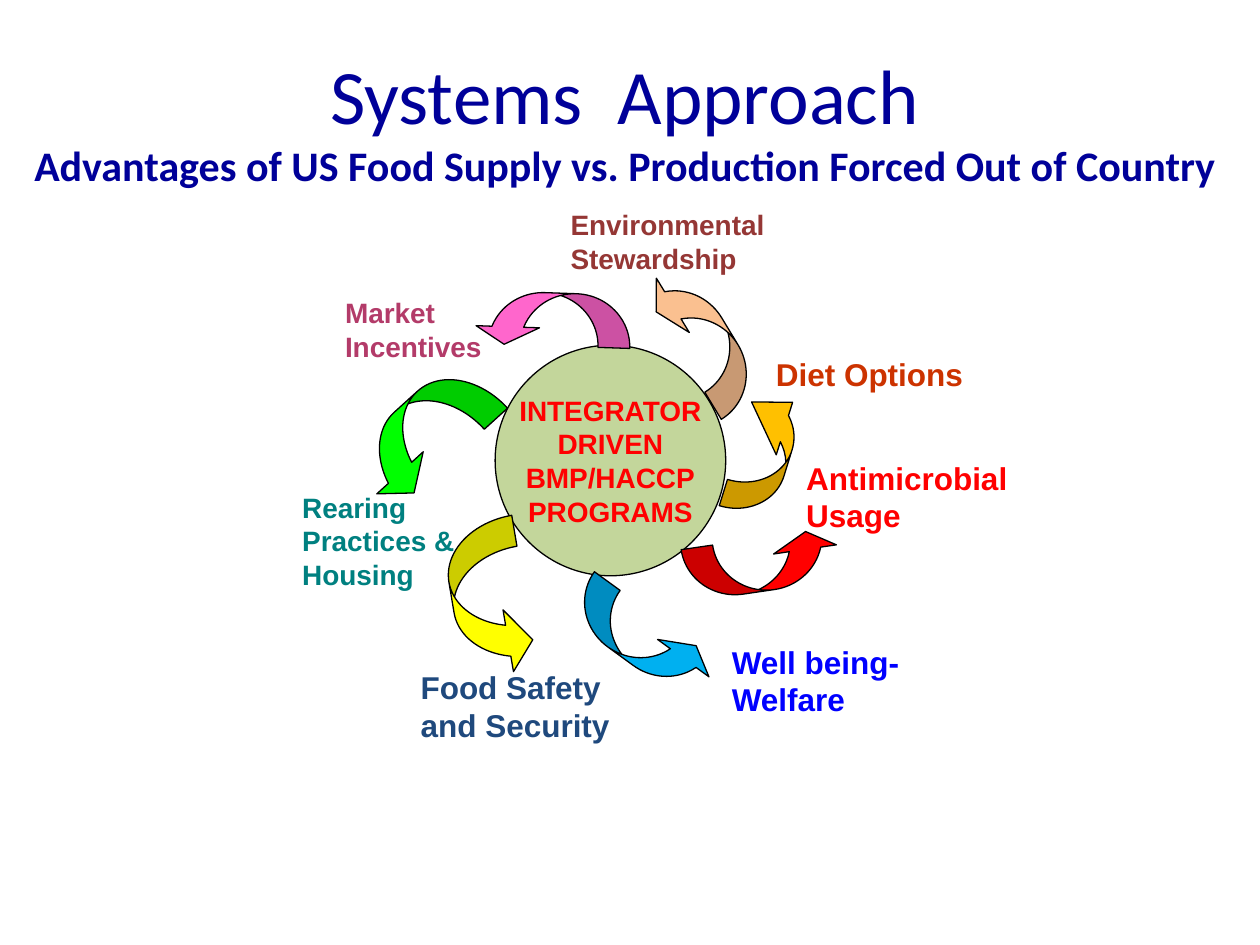
from pptx import Presentation
from pptx.dml.color import RGBColor
from pptx.enum.shapes import MSO_SHAPE
from pptx.enum.text import MSO_ANCHOR, MSO_AUTO_SIZE, PP_ALIGN
from pptx.util import Inches, Pt

RIGHT = MSO_SHAPE.CURVED_RIGHT_ARROW
UP = MSO_SHAPE.CURVED_UP_ARROW
SLIM = (0.6, 1.2, 0.333)
WIDE = (0.429, 0.857, 0.333)
SHORT = (0.52, 1.04, 0.742)

# Arrow: shape, offset in the wheel, size, rotation, adjustments, fill
ARROWS = [
    (RIGHT, (3.07, 0.46), (0.42, 1.25), 148.8, SLIM, "FAC090"),
    (RIGHT, (2.59, 2.85), (0.42, 1.25), 306, SLIM, "00B0F0"),
    (RIGHT, (1.87, 0.31), (0.42, 1.25), 91.9, SLIM, "FF66CC"),
    (UP, (3.13, 2.67), (1.25, 0.42), 351.7, SLIM, "FF0000"),
    (UP, (3.23, 1.75), (1.08, 0.42), 287.3, SHORT, "FFC000"),
    (RIGHT, (1.29, 2.53), (0.58, 1.25), 350.4, WIDE, "FFFF00"),
    (RIGHT, (0.78, 1.22), (0.58, 1.25), 47.8, WIDE, "00FF00"),
]

# Label: lines, offset in the wheel, size, font size, colour, wrap
LABELS = [
    (["Food Safety and Security"], (0.94, 3.65), (1.76, 0.71), 18, "1F497D", True),
    (["Market", "Incentives"], (0.34, 0.7), (1.3, 0.64), 16, "B33B69", False),
    (["Rearing", "Practices &", "Housing"], (0, 2.24), (1.42, 0.91), 16, "008080", False),
    (["Environmental", "Stewardship"], (2.13, 0), (1.82, 0.64), 16, "953735", False),
    (["Diet Options"], (3.76, 1.17), (1.7, 0.4), 18, "CC3300", False),
    (["Antimicrobial Usage"], (4, 1.99), (1.92, 0.71), 18, "FF0000", True),
    (["Well being- Welfare"], (3.41, 3.45), (1.75, 0.71), 18, "0000FF", True),
]


def color(value):
    return RGBColor.from_string(value)


def format_font(font, name, size, fill, bold=False):
    for attribute, value in {"name": name, "size": Pt(size), "bold": bold}.items():
        setattr(font, attribute, value)
    font.color.rgb = color(fill)


def write_lines(text_frame, lines, size, fill, alignment):
    for index, line in enumerate(lines):
        paragraph = text_frame.paragraphs[0] if index == 0 else text_frame.add_paragraph()
        paragraph.alignment = alignment
        run = paragraph.add_run()
        run.text = line
        format_font(run.font, "Arial", size, fill, bold=True)


def add_outlined_shape(slide, kind, left, top, width, height, fill):
    shape = slide.shapes.add_shape(
        kind, Inches(left), Inches(top), Inches(width), Inches(height))
    shape.shadow.inherit = False
    shape.fill.solid()
    shape.fill.fore_color.rgb = color(fill)
    shape.line.color.rgb = color("000000")
    shape.line.width = Pt(0.75)
    return shape


def add_heading(slide, left, top, width, height):
    text_box = slide.shapes.add_textbox(
        Inches(left), Inches(top), Inches(width), Inches(height))
    frame_format = {"word_wrap": True, "vertical_anchor": MSO_ANCHOR.MIDDLE,
                    "margin_left": 0, "margin_top": 0,
                    "margin_right": 0, "margin_bottom": 0}
    for attribute, value in frame_format.items():
        setattr(text_box.text_frame, attribute, value)
    paragraph = text_box.text_frame.paragraphs[0]
    paragraph.alignment = PP_ALIGN.CENTER
    title = paragraph.add_run()
    title.text = "Systems  Approach"
    format_font(title.font, "Calibri", 44, "000099")
    paragraph.add_line_break()
    subtitle = paragraph.add_run()
    subtitle.text = "Advantages of US Food Supply vs. Production Forced Out of Country"
    format_font(subtitle.font, "Calibri", 24, "000099", bold=True)


def add_wheel(slide, left, top):
    # Hub
    hub = add_outlined_shape(
        slide, MSO_SHAPE.OVAL, left + 1.63, top + 1.14, 1.83, 1.83, "C3D69B")
    hub.text_frame.word_wrap = False
    hub.text_frame.vertical_anchor = MSO_ANCHOR.MIDDLE
    write_lines(hub.text_frame, ["INTEGRATOR", "DRIVEN", "BMP/HACCP", "PROGRAMS"],
                16, "FF0000", PP_ALIGN.CENTER)

    # Curved arrows around the hub
    for kind, (x, y), size, rotation, adjustments, fill in ARROWS:
        arrow = add_outlined_shape(slide, kind, left + x, top + y, *size, fill)
        arrow.rotation = rotation
        for index, value in enumerate(adjustments):
            arrow.adjustments[index] = value

    # Labels at the arrow tips
    for lines, (x, y), (width, height), size, fill, wrap in LABELS:
        label = slide.shapes.add_textbox(
            Inches(left + x), Inches(top + y), Inches(width), Inches(height))
        label.text_frame.word_wrap = wrap
        label.text_frame.auto_size = MSO_AUTO_SIZE.SHAPE_TO_FIT_TEXT
        write_lines(label.text_frame, lines, size, fill, PP_ALIGN.LEFT)


def main():
    presentation = Presentation()
    presentation.slide_width = Inches(10)
    presentation.slide_height = Inches(7.5)
    slide = presentation.slides.add_slide(presentation.slide_layouts[6])
    add_heading(slide, 0.17, 0.54, 9.58, 0.8)
    add_wheel(slide, 2.3, 1.6)
    presentation.save("out.pptx")


if __name__ == "__main__":
    main()
